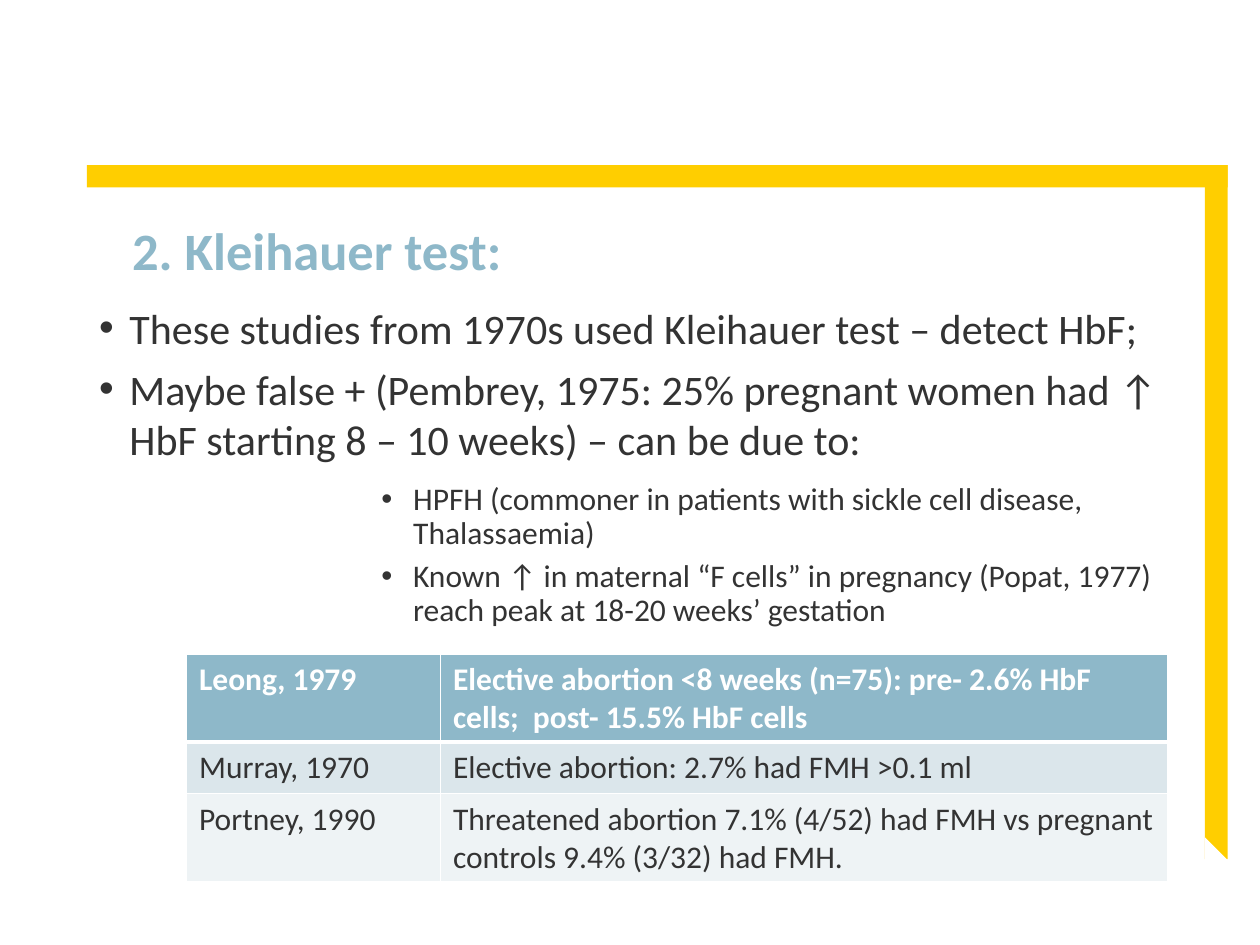
"""Build the Kleihauer test slide with its bullets and study table."""
from dataclasses import dataclass

from lxml import etree
from pptx import Presentation
from pptx import util as u
from pptx.dml.color import RGBColor
from pptx.enum import shapes, text
from pptx.oxml import ns


@dataclass
class Theme:
    font: str = "Calibri"
    blue: str = "8EB8C9"
    gold: str = "FFCE00"
    ink: str = "333333"
    white: str = "FFFFFF"
    bands: tuple = ("8EB8C9", "DBE6EB", "EEF3F5")
    head: int = 30
    main: int = 24
    small: int = 18


def put(par, words, size, color, bold=False):
    run = par.add_run()
    run.text = words
    run.font.name = look.font
    run.font.size = u.Pt(size)
    run.font.bold = bold
    run.font.color.rgb = RGBColor.from_string(color)


def edge(cell, side, width):
    line = etree.SubElement(cell._tc.get_or_add_tcPr(), ns.qn("a:ln" + side), w=str(u.Pt(width)))
    fill = etree.SubElement(line, ns.qn("a:solidFill"))
    etree.SubElement(fill, ns.qn("a:srgbClr"), val=look.white)


look = Theme()
deck = Presentation()
deck.slide_width, deck.slide_height = u.Cm(25.4), u.Cm(19.05)
slide = deck.slides.add_slide(deck.slide_layouts[5])

kind = shapes.MSO_SHAPE
bars = [
    (kind.RECTANGLE, 1.75, 3.33, 23, 0.45, look.gold),
    (kind.RECTANGLE, 24.29, 3.33, 0.46, 13.99, look.gold),
    (kind.ISOSCELES_TRIANGLE, 24.29, 16.88, 0.46, 0.46, look.white),
]
for form, left, top, wide, high, color in bars:
    bar = slide.shapes.add_shape(form, u.Cm(left), u.Cm(top), u.Cm(wide), u.Cm(high))
    bar.shadow.inherit = False
    bar.fill.solid()
    bar.fill.fore_color.rgb = RGBColor.from_string(color)
    bar.line.fill.background()
    if form == kind.ISOSCELES_TRIANGLE:
        bar.adjustments[0] = 0

title = slide.shapes.title
title.left, title.top, title.width, title.height = u.Cm(1.75), u.Cm(3.96), u.Cm(21.9), u.Cm(1.85)
frame = title.text_frame
frame.auto_size = text.MSO_AUTO_SIZE.NONE
frame.vertical_anchor = text.MSO_ANCHOR.BOTTOM
par = frame.paragraphs[0]
par.alignment = text.PP_ALIGN.LEFT
par.line_spacing = 0.9
par._p.get_or_add_pPr().set("marL", str(u.Cm(0.66)))
put(par, "2. Kleihauer test:", look.head, look.blue, True)

points = [
    (0, "These studies from 1970s used Kleihauer test – detect HbF;"),
    (0, "Maybe false + (Pembrey, 1975: 25% pregnant women had ↑ HbF starting 8 – 10 weeks) – can be due to:"),
    (5, "HPFH (commoner in patients with sickle cell disease, Thalassaemia)"),
    (5, "Known ↑ in maternal “F cells” in pregnancy (Popat, 1977) reach peak at 18-20 weeks’ gestation"),
]
body = slide.shapes.add_textbox(u.Cm(1.09), u.Cm(5.97), u.Cm(22.56), u.Cm(12.19)).text_frame
body.word_wrap = True
for i, (level, words) in enumerate(points):
    par = body.add_paragraph() if i else body.paragraphs[0]
    par.level = level
    if level:
        par.line_spacing, par.space_before = 0.9, u.Pt(5)
    else:
        par.space_after = u.Pt(6)
    prop = par._p.get_or_add_pPr()
    prop.set("marL", str(u.Cm(6.99 if level else 1.27)))
    prop.set("indent", str(u.Cm(-0.64 if level else -0.61)))
    etree.SubElement(prop, ns.qn("a:buFont"), typeface="Arial")
    etree.SubElement(prop, ns.qn("a:buChar"), char="•")
    put(par, words, look.small if level else look.main, look.ink)

rows = [
    ("Leong, 1979", "Elective abortion <8 weeks (n=75): pre- 2.6% HbF cells;  post- 15.5% HbF cells"),
    ("Murray, 1970", "Elective abortion: 2.7% had FMH >0.1 ml"),
    ("Portney, 1990", "Threatened abortion 7.1% (4/52) had FMH vs pregnant controls 9.4% (3/32) had FMH."),
]
grid = slide.shapes.add_table(3, 2, u.Cm(3.76), u.Cm(13.18), u.Cm(19.78), u.Cm(4.6)).table
for col, wide in zip(grid.columns, (5.12, 14.66)):
    col.width = u.Cm(wide)
for row, high in zip(grid.rows, (1.78, 1.04, 1.78)):
    row.height = u.Cm(high)
for r, row in enumerate(rows):
    for c, words in enumerate(row):
        cell = grid.cell(r, c)
        for side in "LRTB":
            thick = (r, side) in ((0, "B"), (1, "T"))
            edge(cell, side, 3 if thick else 1)
        cell.fill.solid()
        cell.fill.fore_color.rgb = RGBColor.from_string(look.bands[r])
        put(cell.text_frame.paragraphs[0], words, look.small, look.ink if r else look.white, r == 0)

deck.save("out.pptx")
